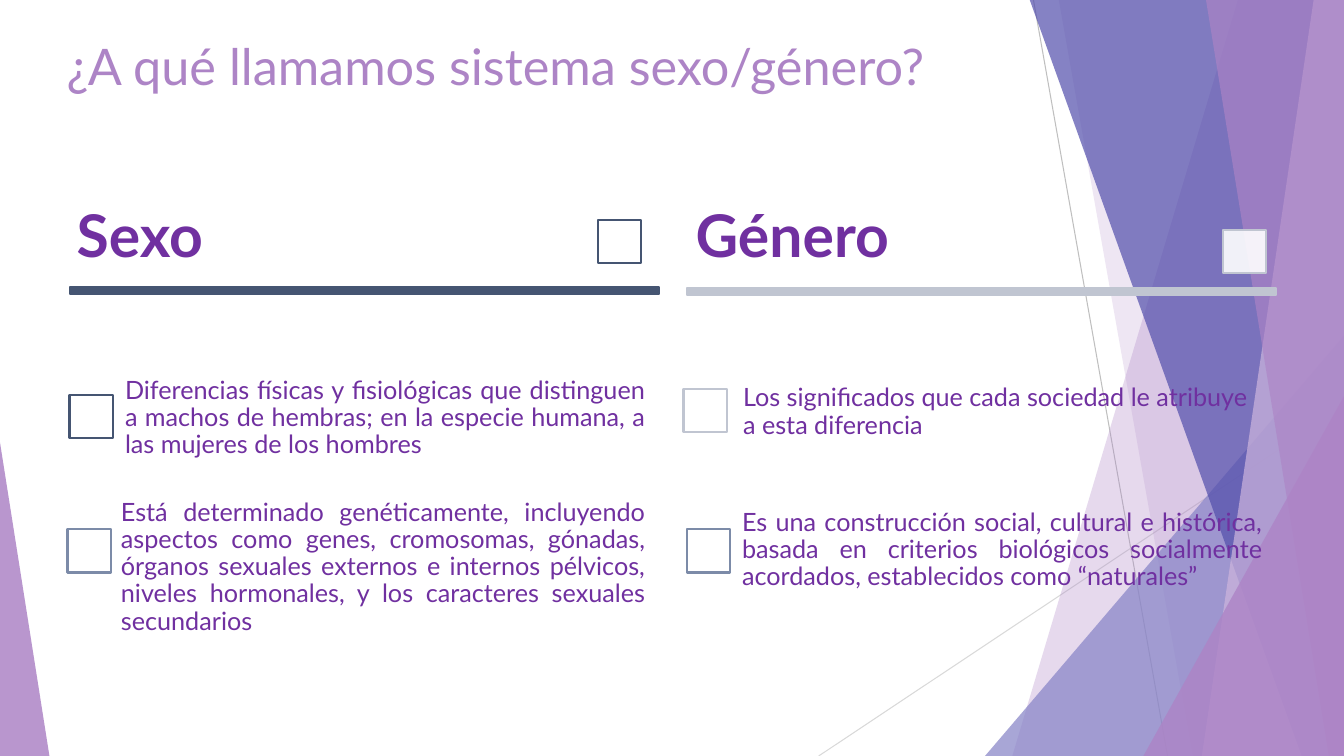
import pptx
import pptx.util
import pptx.dml.color
import pptx.enum.shapes
import pptx.enum.text
import pptx.oxml
import pptx.oxml.ns

Inches = pptx.util.Inches
SHAPE = pptx.enum.shapes.MSO_SHAPE
ANCHOR = pptx.enum.text.MSO_ANCHOR
ALIGN = pptx.enum.text.PP_ALIGN

FONT = "Lato"
COLORS = {
    "lilac": "AD84C6", "pale lilac": "CEB5DD", "periwinkle": "8784C7",
    "indigo": "524EAB", "text": "7030A0", "white": "FFFFFF",
    "navy": "455572", "steel": "7C8BA8", "silver": "C0C5D1",
    "gray": "BFBFBF", "light gray": "D9D9D9",
}
TITLE = "¿A qué llamamos sistema sexo/género?"

RAYS = [
    ((10.25, 0), (11.58, 7.5), "gray"),
    ((13.33, 4.03), (8.12, 7.5), "light gray"),
]
FACETS = [
    ("band", (12.28, 10.04), "lilac", 30),
    ("band", (10.5, 11.83), "lilac", 20),
    ("triangle", (9.77, 3.33, 3.56, 1), "periwinkle", 72),
    ("band", (10.21, 12.91), "indigo", 70),
    ("band", (13.03, 11.92), "pale lilac", 70),
    ("band", (11.96, 13.18), "lilac", 65),
    ("triangle", (11.34, 3.93, 1.99, 1), "lilac", 80),
    ("triangle", (0, 4.39, 0.49, 0), "lilac", 85),
]
COLUMNS = [
    {
        "heading": "Sexo", "heading left": 0.67, "color": "navy",
        "rule": (0.69, 2.85), "square": (5.93, 2.18),
        "points": [
            ("Diferencias físicas y fisiológicas que distinguen a machos de hembras; "
             "en la especie humana, a las mujeres de los hombres",
             (1.1, 3.65), (0.14, 0.14), ALIGN.JUSTIFY, (0.69, 3.92), "navy"),
            ("Está determinado genéticamente, incluyendo aspectos como genes, "
             "cromosomas, gónadas, órganos sexuales externos e internos pélvicos, "
             "niveles hormonales, y los caracteres sexuales secundarios",
             (1.08, 4.96), (0.12, 0.46), ALIGN.JUSTIFY, (0.67, 5.25), "steel"),
        ],
    },
    {
        "heading": "Género", "heading left": 6.81, "color": "silver",
        "rule": (6.81, 2.86), "square": (12.13, 2.28),
        "points": [
            ("Los significados que cada sociedad le atribuye a esta diferencia",
             (7.23, 3.59), (0.14, 0.14), ALIGN.LEFT, (6.78, 3.86), "silver"),
            ("Es una construcción social, cultural e histórica, basada en criterios "
             "biológicos socialmente acordados, establecidos como “naturales”",
             (7.22, 4.96), (0.14, 0.14), ALIGN.JUSTIFY, (6.81, 5.25), "steel"),
        ],
    },
]
WIDTH, HEIGHT = 13.33, 7.5
COLUMN_WIDTH, POINT_WIDTH, SQUARE = 5.85, 5.44, 0.43


def rgb(name):
    return pptx.dml.color.RGBColor.from_string(COLORS[name])


def paint(shape, fill, opacity=100, line=None):
    shape.shadow.inherit = False
    shape.fill.solid()
    shape.fill.fore_color.rgb = rgb(fill)
    if opacity < 100:
        color = shape._element.spPr.find(".//" + pptx.oxml.ns.qn("a:srgbClr"))
        alpha = pptx.oxml.parse_xml(
            f'<a:alpha {pptx.oxml.ns.nsdecls("a")} val="{opacity * 1000}"/>')
        color.append(alpha)
    if line:
        shape.line.color.rgb = rgb(line)
        shape.line.width = pptx.util.Pt(1.5)
    else:
        shape.line.fill.background()


def add_ray(slide, start, end, color):
    ray = slide.shapes.add_connector(
        pptx.enum.shapes.MSO_CONNECTOR.STRAIGHT,
        *[Inches(value) for value in start + end])
    ray.line.color.rgb = rgb(color)
    ray.line.width = pptx.util.Pt(0.75)
    ray._element.spPr.append(
        pptx.oxml.parse_xml(f'<a:effectLst {pptx.oxml.ns.nsdecls("a")}/>'))


def add_facet(slide, kind, place, color, opacity):
    if kind == "band":
        top, bottom = place
        corners = [(WIDTH, -0.01), (WIDTH, HEIGHT), (bottom, HEIGHT)]
        builder = slide.shapes.build_freeform(Inches(top), Inches(-0.01))
        builder.add_line_segments([(Inches(x), Inches(y)) for x, y in corners])
        facet = builder.convert_to_shape()
    else:
        left, top, width, apex = place
        facet = slide.shapes.add_shape(
            SHAPE.ISOSCELES_TRIANGLE, Inches(left), Inches(top),
            Inches(width), Inches(HEIGHT - top))
        facet.adjustments[0] = apex
    paint(facet, color, opacity)


def add_box(slide, place, width, height, line, fill="white", opacity=100):
    box = slide.shapes.add_shape(
        SHAPE.RECTANGLE, *[Inches(value) for value in (*place, width, height)])
    paint(box, fill, opacity, line)


def write(frame, text, size, color, bold=False, align=ALIGN.LEFT, spacing=0.9):
    para = frame.paragraphs[0]
    para.alignment = align
    para.line_spacing = spacing
    span = para.add_run()
    span.text = text
    span.font.name = FONT
    span.font.size = pptx.util.Pt(size)
    span.font.bold = bold
    span.font.color.rgb = rgb(color)


def add_text(slide, place, width, height, insets, text, size, **style):
    box = slide.shapes.add_textbox(
        *[Inches(value) for value in (*place, width, height)])
    frame = box.text_frame
    frame.word_wrap = True
    frame.vertical_anchor = ANCHOR.MIDDLE
    side, top, bottom = insets
    frame.margin_left = frame.margin_right = Inches(side)
    frame.margin_top, frame.margin_bottom = Inches(top), Inches(bottom)
    write(frame, text, size, "text", **style)


def add_column(slide, column):
    color = column["color"]
    add_box(slide, column["rule"], COLUMN_WIDTH, 0.07, color, fill=color)
    add_box(slide, column["square"], SQUARE, SQUARE, color, opacity=90)
    add_text(slide, (column["heading left"], 1.75), COLUMN_WIDTH, 1.24,
             (0.09, 0.06, 0.06), column["heading"], 42, bold=True)
    for text, place, (side, top), align, square, line in column["points"]:
        add_box(slide, square, SQUARE, SQUARE, line)
        add_text(slide, place, POINT_WIDTH, 1, (side, top, side), text, 18, align=align)


def main():
    deck = pptx.Presentation()
    deck.slide_width, deck.slide_height = Inches(WIDTH), Inches(HEIGHT)
    page = deck.slides.add_slide(deck.slide_layouts[5])
    for ray in RAYS:
        add_ray(page, *ray)
    for facet in FACETS:
        add_facet(page, *facet)
    title = page.shapes.title
    title.left, title.top = Inches(0.56), Inches(0.3)
    title.width, title.height = Inches(12.19), Inches(1.25)
    title.text_frame.vertical_anchor = ANCHOR.TOP
    write(title.text_frame, TITLE, 36, "lilac", spacing=1.0)
    for column in COLUMNS:
        add_column(page, column)
    deck.save("out.pptx")


if __name__ == "__main__":
    main()
